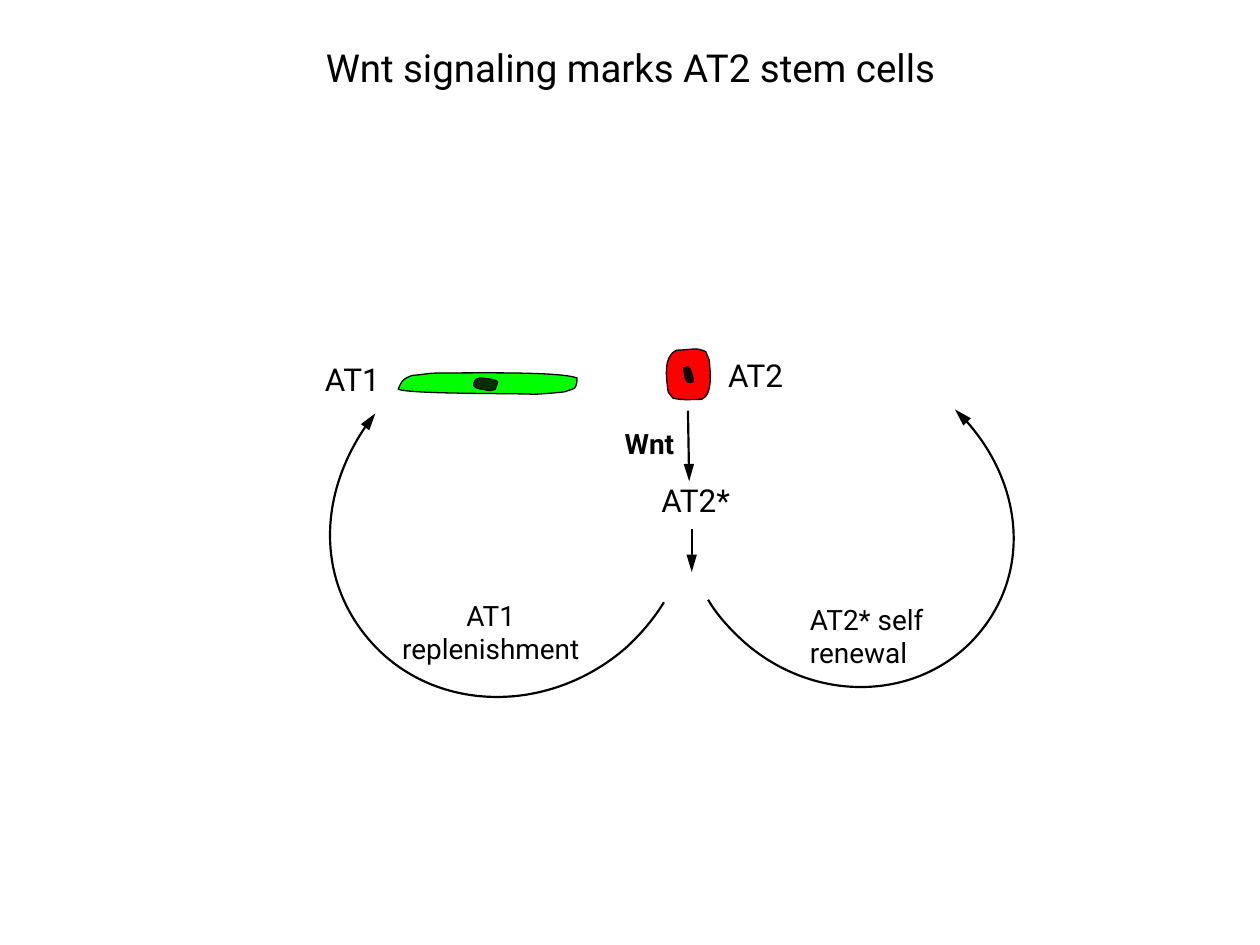
import math

from lxml import etree
from pptx import Presentation
from pptx import util as u
from pptx.dml.color import RGBColor
from pptx.enum import shapes, text
from pptx.oxml.ns import qn

BLACK = RGBColor(0x00, 0x00, 0x00)
GREEN = RGBColor(0x00, 0xFF, 0x00)
DARK_GREEN = RGBColor(0x00, 0x1A, 0x00)
RED = RGBColor(0xFF, 0x00, 0x00)

deck = Presentation()
deck.slide_width, deck.slide_height = u.Inches(10), u.Inches(7.5)
COL, ROW = deck.slide_width / 10, deck.slide_height / 7.5
page = deck.slides.add_slide(deck.slide_layouts[6])


def draw_curve(parent, frame, angle, start, curves, closed):
    """Draw cubic Béziers (x1, y1, x2, y2, x, y on the slide) in a turned frame."""
    x, y, w, h = frame
    builder = parent.build_freeform(x * COL, y * ROW)
    builder.add_line_segments([((x + w) * COL, (y + h) * ROW)], close=closed)
    outline = builder.convert_to_shape()
    outline.shadow.inherit = False
    outline.rotation = angle
    path = outline._element.spPr.find(".//" + qn("a:path"))
    for segment in list(path):
        path.remove(segment)
    cos, sin = math.cos(math.radians(angle)), math.sin(math.radians(angle))
    for tag, values in [("a:moveTo", start)] + [("a:cubicBezTo", c) for c in curves]:
        segment = etree.SubElement(path, qn(tag))
        for px, py in zip(values[::2], values[1::2]):
            dx, dy = px - x - w / 2, py - y - h / 2
            etree.SubElement(segment, qn("a:pt"),
                             x=str(round((w / 2 + dx * cos + dy * sin) * COL)),
                             y=str(round((h / 2 - dx * sin + dy * cos) * ROW)))
    if closed:
        etree.SubElement(path, qn("a:close"))
    return outline


def style_line(shape, points, arrow=False):
    shape.line.color.rgb = BLACK
    shape.line.width = u.Pt(points)
    if arrow:
        etree.SubElement(shape.line._get_or_add_ln(), qn("a:tailEnd"),
                         type="triangle", w="med", len="lg")


# Cells, each followed by its nucleus: fill, opacity, frame, angle, start, curves
cells = [
    (GREEN, 100, (3.78, 2.33, 0.18, 1.42), 89.9, (3.53, 2.96), [
        (3.84, 2.96, 4.45, 2.95, 4.58, 3), (4.58, 3.03, 4.58, 3.05, 4.56, 3.08),
        (4.55, 3.09, 4.48, 3.11, 4.48, 3.11), (4.41, 3.12, 4.24, 3.13, 4.24, 3.13),
        (4.1, 3.12, 3.28, 3.13, 3.16, 3.09), (3.18, 3.05, 3.18, 3.01, 3.27, 2.98),
        (3.39, 2.97, 3.39, 2.96, 3.53, 2.96)]),
    (DARK_GREEN, 90, (3.81, 2.96, 0.1, 0.18), 275.4, (3.89, 3.1), [
        (3.85, 3.09, 3.77, 3.09, 3.76, 3.06), (3.76, 3.05, 3.76, 3.03, 3.77, 3.02),
        (3.77, 3.02, 3.78, 3.01, 3.78, 3.01), (3.79, 3, 3.81, 3, 3.81, 3),
        (3.83, 3, 3.94, 3.01, 3.95, 3.03), (3.94, 3.06, 3.94, 3.07, 3.93, 3.09),
        (3.91, 3.09, 3.91, 3.1, 3.89, 3.1)]),
    (RED, 100, (5.27, 2.77, 0.38, 0.41), 355.7, (5.3, 3.09), [
        (5.29, 3, 5.26, 2.83, 5.37, 2.78), (5.42, 2.78, 5.48, 2.77, 5.53, 2.77),
        (5.55, 2.77, 5.6, 2.79, 5.6, 2.79), (5.61, 2.81, 5.63, 2.86, 5.63, 2.86),
        (5.63, 2.9, 5.67, 3.13, 5.57, 3.17), (5.48, 3.17, 5.42, 3.18, 5.34, 3.16),
        (5.33, 3.13, 5.3, 3.13, 5.3, 3.09)]),
    (BLACK, 90, (5.43, 2.91, 0.06, 0.13), 344, (5.44, 3.01), [
        (5.44, 2.99, 5.42, 2.93, 5.43, 2.92), (5.44, 2.92, 5.45, 2.91, 5.46, 2.91),
        (5.46, 2.91, 5.47, 2.92, 5.47, 2.92), (5.48, 2.92, 5.48, 2.94, 5.48, 2.94),
        (5.49, 2.95, 5.51, 3.02, 5.5, 3.03), (5.48, 3.04, 5.47, 3.04, 5.46, 3.03),
        (5.45, 3.02, 5.45, 3.03, 5.44, 3.01)]),
]
parent = page.shapes
for color, opacity, frame, angle, start, curves in cells:
    if color == RED:  # the AT2 cell and its nucleus form a group
        parent = page.shapes.add_group_shape().shapes
    cell = draw_curve(parent, frame, angle, start, curves, closed=True)
    cell.fill.solid()
    cell.fill.fore_color.rgb = color
    style_line(cell, 0.75)
    if opacity < 100:
        fill_color = cell._element.spPr.find(qn("a:solidFill"))[0]
        etree.SubElement(fill_color, qn("a:alpha"), val=str(opacity * 1000))

# Curved arrows: AT1 replenishment on the left, AT2* self renewal on the right
arcs = [
    ((2.71, 3.1, 1.96, 2.7), 318.8, (5.27, 4.78), [
        (5.19, 4.91, 5.09, 5.03, 4.97, 5.14), (4.35, 5.68, 3.44, 5.66, 2.94, 5.09),
        (2.51, 4.6, 2.53, 3.84, 2.98, 3.28)]),
    ((6.17, 3.21, 1.8, 2.49), 41.2, (5.62, 4.76), [
        (5.69, 4.88, 5.79, 4.99, 5.9, 5.09), (6.46, 5.59, 7.29, 5.57, 7.75, 5.05),
        (8.19, 4.55, 8.11, 3.75, 7.58, 3.25)]),
]
for frame, angle, start, curves in arcs:
    arc = draw_curve(page.shapes, frame, angle, start, curves, closed=False)
    arc.fill.background()
    style_line(arc, 1.25, arrow=True)

# Straight arrows down from AT2* and AT2
for x1, y1, x2, y2 in [(5.49, 4.2, 5.49, 4.54), (5.46, 3.26, 5.47, 3.82)]:
    arrow = page.shapes.add_connector(shapes.MSO_CONNECTOR.STRAIGHT,
                                      round(x1 * COL), round(y1 * ROW),
                                      round(x2 * COL), round(y2 * ROW))
    style_line(arrow, 1.25, arrow=True)
    etree.SubElement(arrow._element.spPr, qn("a:effectLst"))

# Labels and title: place, paragraphs, size, alignment, bold, wrap
LEFT, CENTER = text.PP_ALIGN.LEFT, text.PP_ALIGN.CENTER
labels = [
    ((2.48, 2.81, 0.68, 0.4), ["AT1"], 18, LEFT, False, True),
    ((3.06, 4.7, 1.67, 0.66), ["AT1", "replenishment"], 16, CENTER, False, True),
    ((5.68, 2.78, 0.77, 0.4), ["AT2"], 18, LEFT, False, True),
    ((5.15, 3.77, 0.77, 0.4), ["AT2*"], 18, LEFT, False, True),
    ((6.33, 4.73, 1.22, 0.66), ["AT2* self", "renewal"], 16, LEFT, False, True),
    ((0.67, 0.3, 8.67, 0.86), ["Wnt signaling marks AT2 stem cells"], 22, CENTER, False, True),
    ((4.86, 3.34, 0.63, 0.37), ["Wnt"], 16, LEFT, True, False),
]
for (x, y, w, h), lines, size, align, bold, wrap in labels:
    box = page.shapes.add_textbox(round(x * COL), round(y * ROW), round(w * COL), round(h * ROW))
    box.text_frame.word_wrap = wrap
    box.text_frame.text = "\n".join(lines)
    font_format = {"name": "Roboto", "size": u.Pt(size), "bold": bold}
    for para in box.text_frame.paragraphs:
        para.alignment = align
        span = para.runs[0]
        span.font.color.rgb = BLACK
        for key, value in font_format.items():
            setattr(span.font, key, value)

deck.save("out.pptx")
